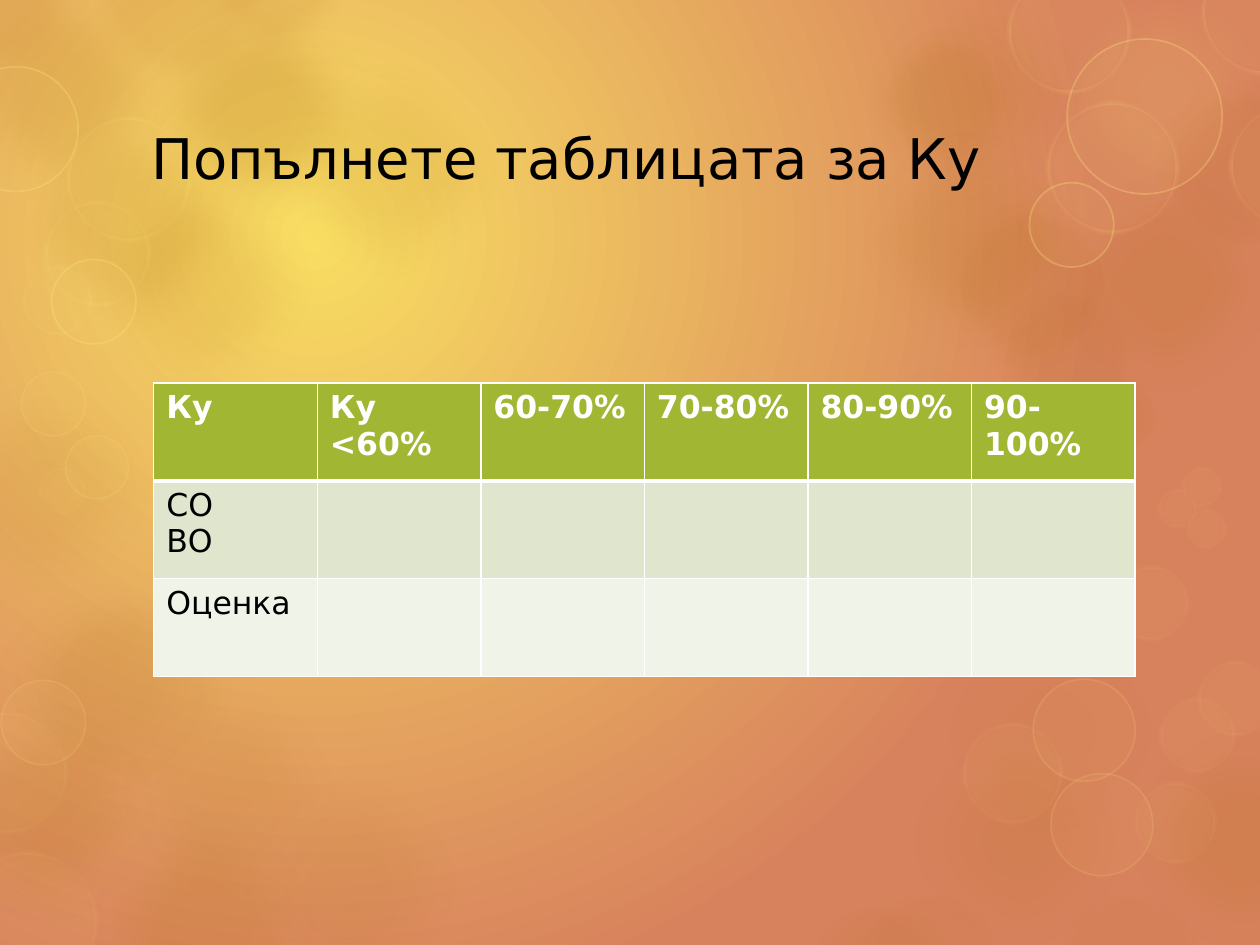
from pptx import Presentation
from pptx.dml.color import RGBColor
from pptx.enum.shapes import MSO_SHAPE
from pptx.enum.text import MSO_ANCHOR
from pptx.oxml import parse_xml
from pptx.oxml.ns import nsdecls, qn
from pptx.util import Cm, Pt

ELLIPSE = MSO_SHAPE.OVAL
MIDDLE = MSO_ANCHOR.MIDDLE
FONT = "DejaVu Sans"
BLACK = RGBColor(0x00, 0x00, 0x00)
WHITE = RGBColor(0xFF, 0xFF, 0xFF)
YELLOW = RGBColor(0xF8, 0xDD, 0x62)
CORAL = RGBColor(0xD8, 0x82, 0x5D)
BROWN = RGBColor(0xAE, 0x6D, 0x11)
SAND = RGBColor(0xF1, 0xBD, 0x74)
GOLD = RGBColor(0xFF, 0xE2, 0x81)
GREEN = RGBColor(0xA1, 0xB6, 0x33)
BAND_DARK = RGBColor(0xE0, 0xE5, 0xCE)
BAND_LIGHT = RGBColor(0xF0, 0xF3, 0xE8)
INCH = 2.54  # the layout grid is in inches, lengths are in centimetres


def write(frame, text, size=18, color=BLACK, bold=False):
    """Put each line of the text in a paragraph of its own."""
    for number, line in enumerate(text.split("\n")):
        para = frame.add_paragraph() if number else frame.paragraphs[0]
        span = para.add_run()
        span.text = line
        span.font.name = FONT
        span.font.size = Pt(size)
        span.font.bold = bold
        span.font.color.rgb = color


def set_alpha(fill, percent):
    color = fill.find(".//" + qn("a:srgbClr"))
    color.append(parse_xml(f'<a:alpha {nsdecls("a")} val="{percent * 1000}"/>'))


deck = Presentation()
deck.slide_width, deck.slide_height = Cm(10 * INCH), Cm(7.5 * INCH)
page = deck.slides.add_slide(deck.slide_layouts[6])

# Background: round gradient, centred in the upper left
backdrop = page.background.fill
backdrop.gradient()
for stop, place, color in zip(backdrop.gradient_stops, (0, 1), (YELLOW, CORAL)):
    stop.position = place
    stop.color.rgb = color
gradient = page.element.find(".//" + qn("a:gradFill"))
gradient.remove(gradient.find(qn("a:lin")))
gradient.append(parse_xml(
    f'<a:path {nsdecls("a")} path="circle">'
    '<a:fillToRect l="50000" t="50000" r="100000" b="100000"/></a:path>'))

# Bubbles: (fill, fill alpha, line, line width, line alpha, soft edge in pt),
# then left, top and diameter of each; some run over the edge of the page
BIG = 2.09
BUBBLES = [
    ((BROWN, 8, None, 0, 0, 25), [
        (-0.26, 4.42, BIG), (0.77, 5.24, BIG), (1.73, 5.96, BIG), (-0.69, 2.82, BIG)]),
    ((BROWN, 10, None, 0, 0, 25), [
        (0.57, 1.2, BIG), (2.05, 0.31, BIG), (6.69, -0.29, BIG),
        (7.06, 5.62, BIG), (6.75, 2.62, 1.33)]),
    ((BROWN, 15, None, 0, 0, 25), [
        (0.57, 6.27, BIG), (-0.56, -0.32, BIG), (0, 0.72, BIG), (8.2, 1.2, BIG),
        (8.81, 5.62, BIG), (-0.68, 5.41, BIG), (6.69, 0.86, BIG)]),
    ((BROWN, 20, None, 0, 0, 25), [(1.01, -0.18, BIG)]),
    ((BROWN, 5, None, 0, 0, 25), [(7.29, 4.77, BIG)]),
    ((GOLD, 10, None, 0, 0, 25), [(8.2, -0.32, BIG)]),
    ((BROWN, 10, SAND, 14, 6, 12), [
        (9.18, 0.65, 1.37), (6.94, 0.23, 1.14), (7.52, 1.59, 1.33),
        (7.89, 2.24, 1.14), (8.47, 2.91, 0.79), (0.75, -0.65, 1.31),
        (1.64, -0.74, 1.13), (-0.57, -0.58, 1.14)]),
    ((BROWN, 6, SAND, 14, 4, 12), [
        (0.3, 4.73, 1.53), (6.33, 7.1, 1.24), (6.7, 7.01, 1.35), (8.29, 7.01, 1.33)]),
    ((GOLD, 5, GOLD, 5, 15, 4), [
        (-0.35, 6.75, 1.13), (-0.44, 5.64, 0.98), (7.63, 5.73, 0.81),
        (9, 6.2, 0.66), (8.83, 4.48, 0.61), (9.2, 5.53, 0.61), (9.5, 5.24, 0.61),
        (9.37, 3.7, 0.33), (9.18, 3.87, 0.33), (9.41, 4.03, 0.33), (0.3, 3.7, 0.39)]),
    ((GOLD, 5, GOLD, 5, 30, 4), [
        (0.52, 0.92, 1), (0.35, 1.59, 0.85), (0.17, 2.1, 0.57), (7.99, -0.24, 0.99),
        (9.53, -0.4, 1), (9.75, 0.82, 0.99), (8.3, 0.8, 1.06)]),
    ((GOLD, 5, GOLD, 1, 15, 0), [
        (0.01, 5.4, 0.67), (8.34, 6.14, 0.81), (8.2, 5.39, 0.81),
        (0.17, 2.95, 0.51), (0.52, 3.46, 0.5)]),
    ((GOLD, 5, GOLD, 1, 30, 0), [
        (-0.37, 0.53, 0.99), (0.41, 2.06, 0.67), (8.47, 0.31, 1.23), (8.17, 1.45, 0.67)]),
]
for (color, alpha, line, width, line_alpha, soft), circles in BUBBLES:
    for left, top, size in circles:
        bubble = page.shapes.add_shape(
            ELLIPSE, *(Cm(value * INCH) for value in (left, top, size, size)))
        bubble.shadow.inherit = False
        bubble.fill.solid()
        bubble.fill.fore_color.rgb = color
        set_alpha(bubble.element.spPr.find(qn("a:solidFill")), alpha)
        if line is None:
            bubble.line.fill.background()
        else:
            bubble.line.color.rgb = line
            bubble.line.width = Pt(width)
            set_alpha(bubble.element.spPr.find(qn("a:ln")), line_alpha)
        if soft:
            bubble.element.spPr.find(qn("a:effectLst")).append(
                parse_xml(f'<a:softEdge {nsdecls("a")} rad="{Pt(soft)}"/>'))

# Title
title = page.shapes.add_textbox(
    Cm(1.1 * INCH), Cm(0.74 * INCH), Cm(7.79 * INCH), Cm(1.01 * INCH))
title.text_frame.word_wrap = True
title.text_frame.vertical_anchor = MIDDLE
write(title.text_frame, "Попълнете таблицата за Ку", size=32)

# Table
ROWS = [
    ["Ку", "Ку <60%", "60-70%", "70-80%", "80-90%", "90-100%"],
    ["СО\nВО", "", "", "", "", ""],
    ["Оценка", "", "", "", "", ""],
]
table = page.shapes.add_table(
    len(ROWS), len(ROWS[0]), Cm(1.22 * INCH), Cm(3.04 * INCH),
    Cm(7.79 * INCH), Cm(2.33 * INCH)).table
for row, (texts, color) in enumerate(zip(ROWS, (GREEN, BAND_DARK, BAND_LIGHT))):
    header = row == 0
    for column, text in enumerate(texts):
        cell = table.cell(row, column)
        cell.fill.solid()
        cell.fill.fore_color.rgb = color
        if text:
            write(cell.text_frame, text, color=WHITE if header else BLACK, bold=header)
        # Borders come before the fill; the line under the header is thicker
        widths = {"lnL": 1, "lnR": 1, "lnT": 3 if row == 1 else 1, "lnB": 3 if header else 1}
        properties = cell._tc.get_or_add_tcPr()
        for place, (side, width) in enumerate(widths.items()):
            properties.insert(place, parse_xml(
                f'<a:{side} {nsdecls("a")} w="{Pt(width)}"><a:solidFill>'
                f'<a:srgbClr val="{WHITE}"/></a:solidFill></a:{side}>'))

deck.save("out.pptx")
